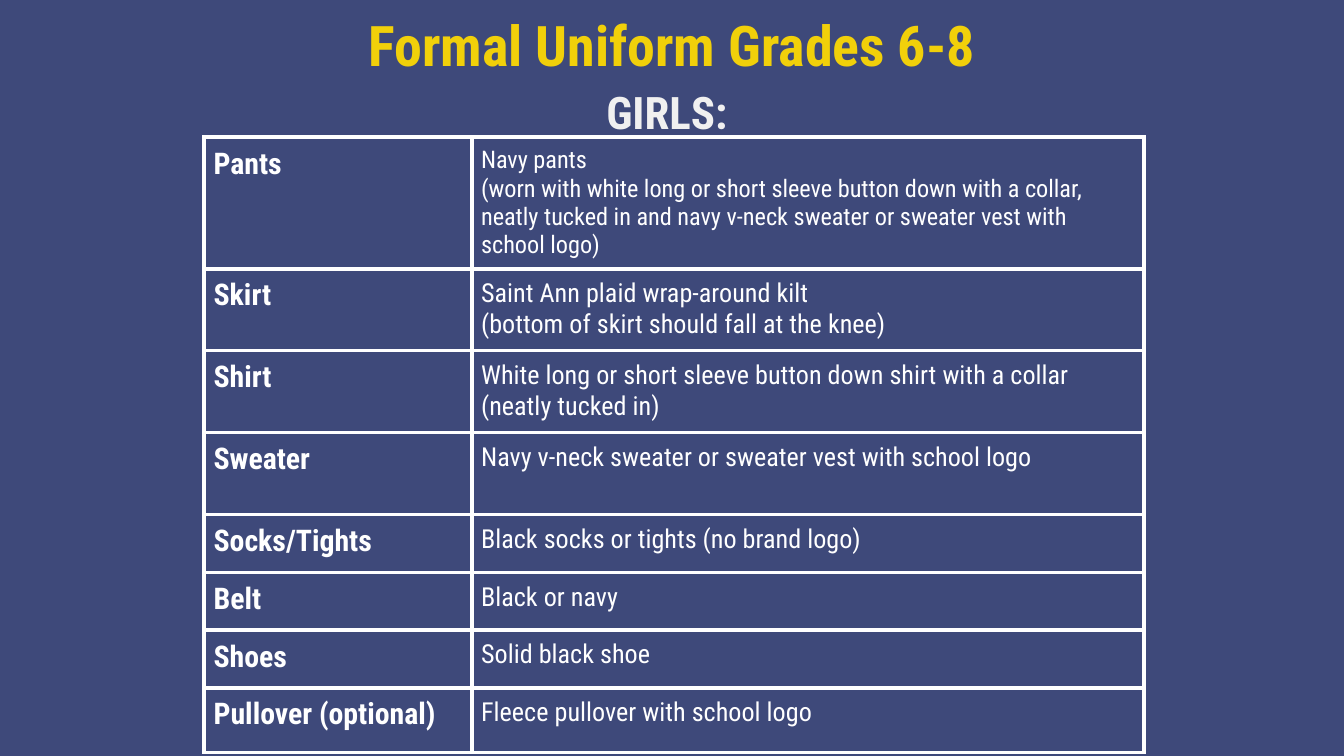
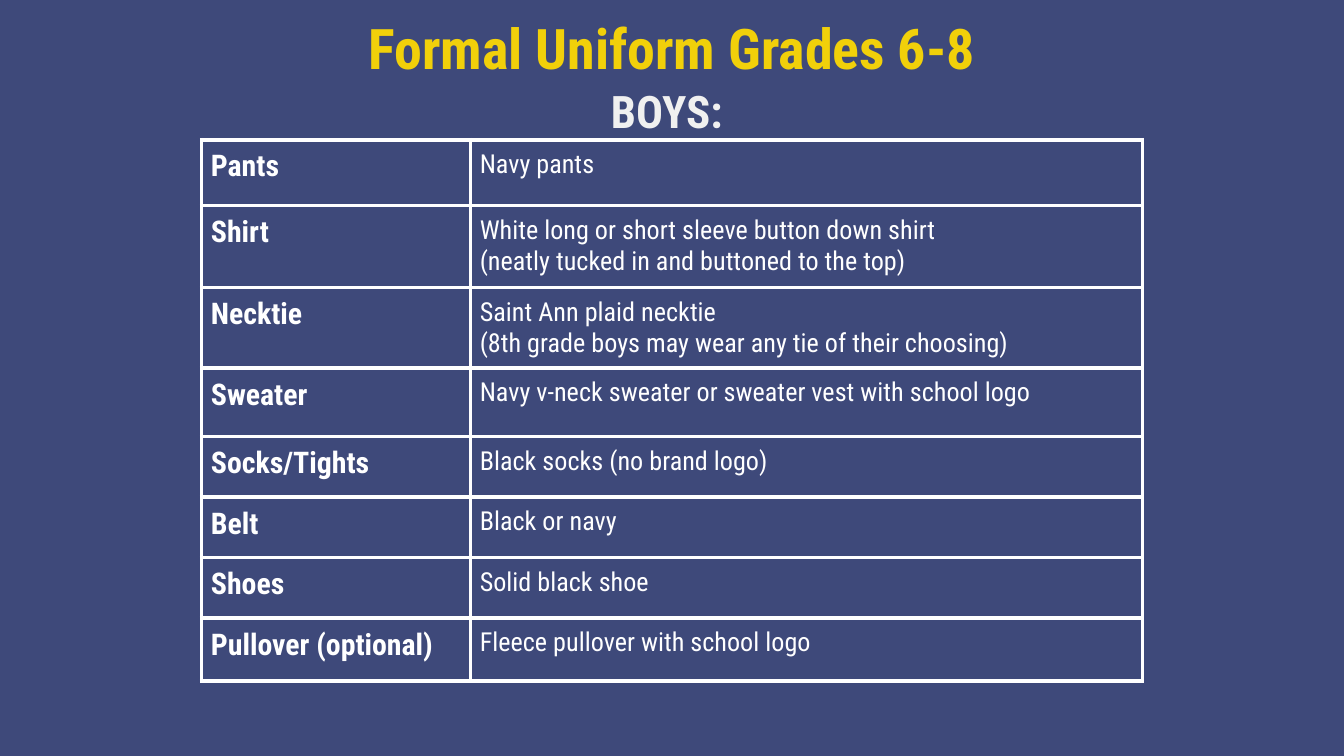
from dataclasses import dataclass

from pptx import Presentation
from pptx import util as u
from pptx.dml.color import RGBColor
from pptx.enum import text
from pptx.oxml.ns import qn
from lxml import etree


@dataclass(frozen=True)
class Theme:
    font: str = "Roboto Condensed"
    background: str = "3E497A"
    title: str = "F1D00A"
    subtitle: str = "F0F0F0"
    table: str = "FFFFFF"
    title_size: float = 30
    subtitle_size: float = 24
    item_size: float = 16
    detail_size: float = 14
    small_size: float = 13
    border: float = 2.25
    cell_inset: float = 0.07
    box_inset: float = 0.1


THEME = Theme()
TITLE = "Formal Uniform Grades 6-8"
TITLE_ONLY = 5

# Each row: item, lines of detail, row height
GIRLS = [
    ("Pants", ["Navy pants",
               "(worn with white long or short sleeve button down with a collar, "
               "neatly tucked in and navy v-neck sweater or sweater vest with "
               "school logo)"], 0.45),
    ("Skirt", ["Saint Ann plaid wrap-around kilt",
               "(bottom of skirt should fall at the knee)"], 0.61),
    ("Shirt", ["White long or short sleeve button down shirt with a collar "
               "(neatly tucked in)"], 0.61),
    ("Sweater", ["Navy v-neck sweater or sweater vest with school logo"], 0.61),
    ("Socks/Tights", ["Black socks or tights (no brand logo)"], 0.43),
    ("Belt", ["Black or navy"], 0.43),
    ("Shoes", ["Solid black shoe"], 0.43),
    ("Pullover (optional)", ["Fleece pullover with school logo"], 0.48),
]
BOYS = [
    ("Pants", ["Navy pants"], 0.49),
    ("Shirt", ["White long or short sleeve button down shirt",
               "(neatly tucked in and buttoned to the top)"], 0.61),
    ("Necktie", ["Saint Ann plaid necktie",
                 "(8th grade boys may wear any tie of their choosing)"], 0.45),
    ("Sweater", ["Navy v-neck sweater or sweater vest with school logo"], 0.51),
    ("Socks/Tights", ["Black socks (no brand logo)"], 0.45),
    ("Belt", ["Black or navy"], 0.45),
    ("Shoes", ["Solid black shoe"], 0.45),
    ("Pullover (optional)", ["Fleece pullover with school logo"], 0.47),
]


def write_lines(frame, lines, size, color, bold=False, align=text.PP_ALIGN.LEFT):
    """Fill a text frame with one paragraph per line."""
    frame.word_wrap = True
    for index, line in enumerate(lines):
        para = frame.paragraphs[0] if index == 0 else frame.add_paragraph()
        para.text = line
        para.alignment = align
        para.font.name = THEME.font
        para.font.size = u.Pt(size)
        para.font.bold = bold
        para.font.color.rgb = RGBColor.from_string(color)


def write_heading(shape, place, line, size, color):
    """Place a centred bold heading."""
    shape.left, shape.top, shape.width, shape.height = map(u.Inches, place)
    frame = shape.text_frame
    frame.auto_size = text.MSO_AUTO_SIZE.NONE
    frame.vertical_anchor = text.MSO_ANCHOR.TOP
    frame.margin_left = frame.margin_right = u.Inches(THEME.box_inset)
    frame.margin_top = frame.margin_bottom = u.Inches(THEME.box_inset)
    write_lines(frame, [line], size, color, True, text.PP_ALIGN.CENTER)


def draw_borders(cell):
    properties = cell._tc.get_or_add_tcPr()
    for side in ("a:lnL", "a:lnR", "a:lnT", "a:lnB"):
        line = etree.SubElement(properties, qn(side), w=str(u.Pt(THEME.border)))
        fill = etree.SubElement(line, qn("a:solidFill"))
        etree.SubElement(fill, qn("a:srgbClr"), val=THEME.table)


def write_cell(cell, lines, size, bold):
    cell.margin_left = cell.margin_right = u.Inches(THEME.cell_inset)
    cell.margin_top = cell.margin_bottom = u.Inches(THEME.cell_inset)
    write_lines(cell.text_frame, lines, size, THEME.table, bold)
    draw_borders(cell)
    cell.fill.background()


def add_uniform_table(page, left, top, widths, rows):
    height = sum(row[2] for row in rows)
    table = page.shapes.add_table(
        len(rows), len(widths), u.Inches(left), u.Inches(top),
        u.Inches(sum(widths)), u.Inches(height)).table
    table.first_row = table.horz_banding = False
    for column, width in zip(table.columns, widths):
        column.width = u.Inches(width)
    for index, (item, details, row_height) in enumerate(rows):
        table.rows[index].height = u.Inches(row_height)
        # The long two-part entry takes the smaller type
        long_entry = sum(map(len, details)) > 100
        size = THEME.small_size if long_entry else THEME.detail_size
        write_cell(table.cell(index, 0), [item], THEME.item_size, True)
        write_cell(table.cell(index, 1), details, size, False)


def add_uniform_page(deck, title_top, group, group_place, table_place, widths, rows):
    page = deck.slides.add_slide(deck.slide_layouts[TITLE_ONLY])
    # Group heading
    box = page.shapes.add_textbox(*map(u.Inches, group_place))
    write_heading(box, group_place, group, THEME.subtitle_size, THEME.subtitle)
    box.text_frame.paragraphs[0].line_spacing = 1.15
    # Title
    write_heading(page.shapes.title, (0, title_top, 10, 0.63), TITLE,
                  THEME.title_size, THEME.title)
    # Uniform items
    add_uniform_table(page, *table_place, widths, rows)


def main():
    deck = Presentation()
    # Widescreen, 16:9
    deck.slide_width = u.Inches(10)
    deck.slide_height = u.Inches(10 * 9 / 16)
    backdrop = deck.slide_master.background.fill
    backdrop.solid()
    backdrop.fore_color.rgb = RGBColor.from_string(THEME.background)

    add_uniform_page(deck, -0.02, "GIRLS: ", (2.47, 0.47, 5.06, 0.47),
                     (1.52, 1.02), (1.99, 5), GIRLS)
    add_uniform_page(deck, 0, "BOYS: ", (2.5, 0.46, 5, 0.56),
                     (1.5, 1.04), (2, 5), BOYS)
    deck.save("out.pptx")


if __name__ == "__main__":
    main()
